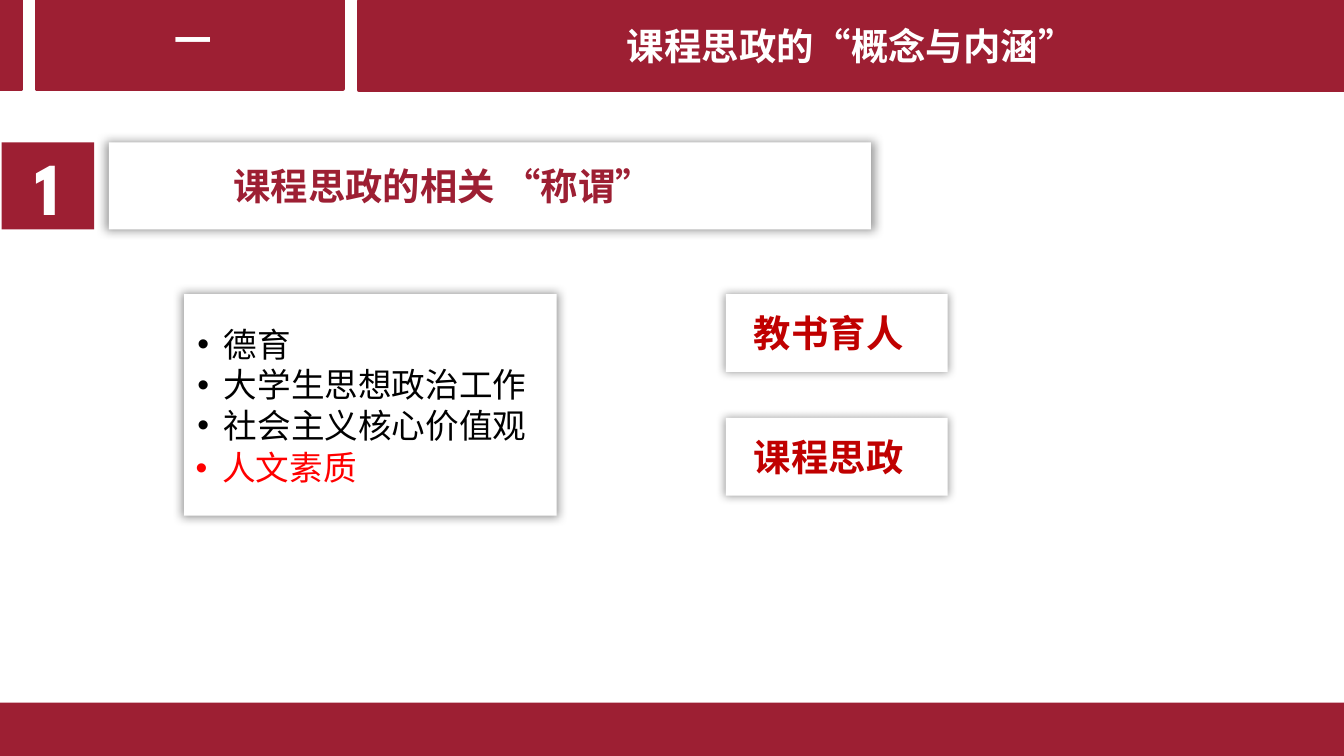
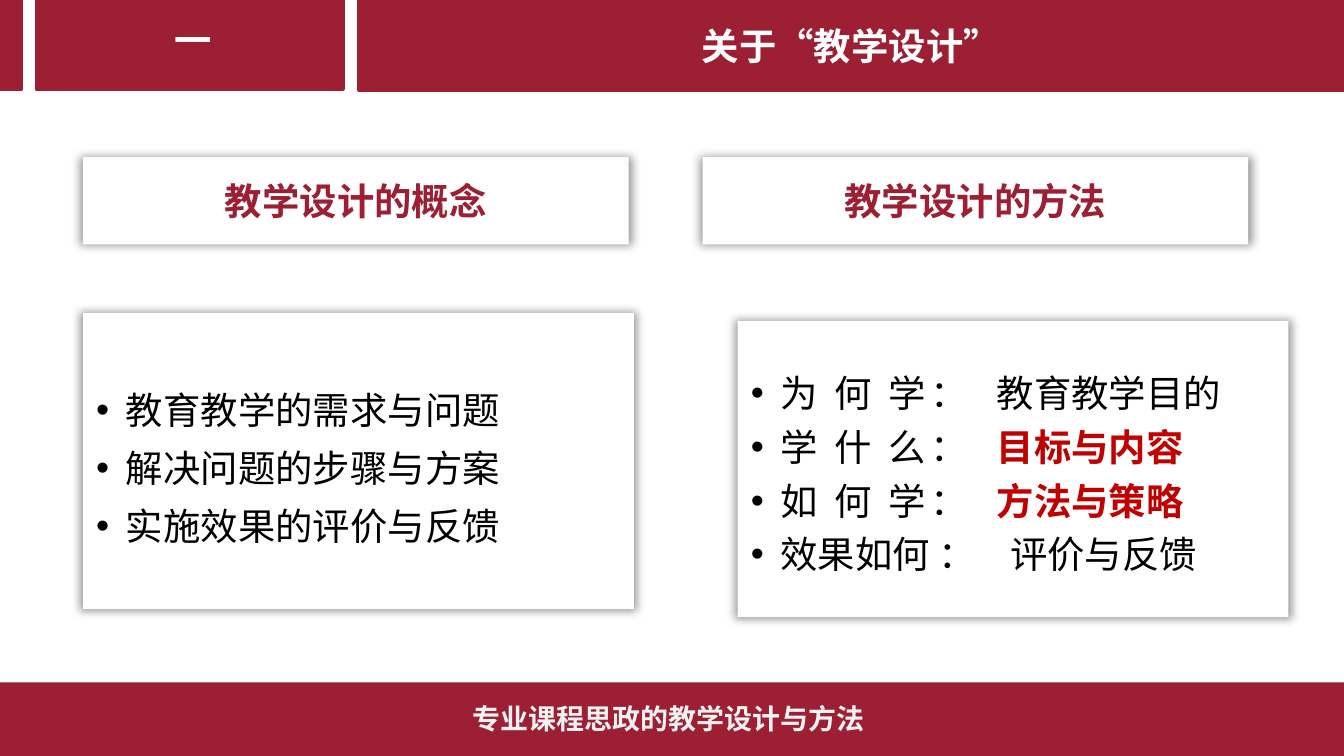
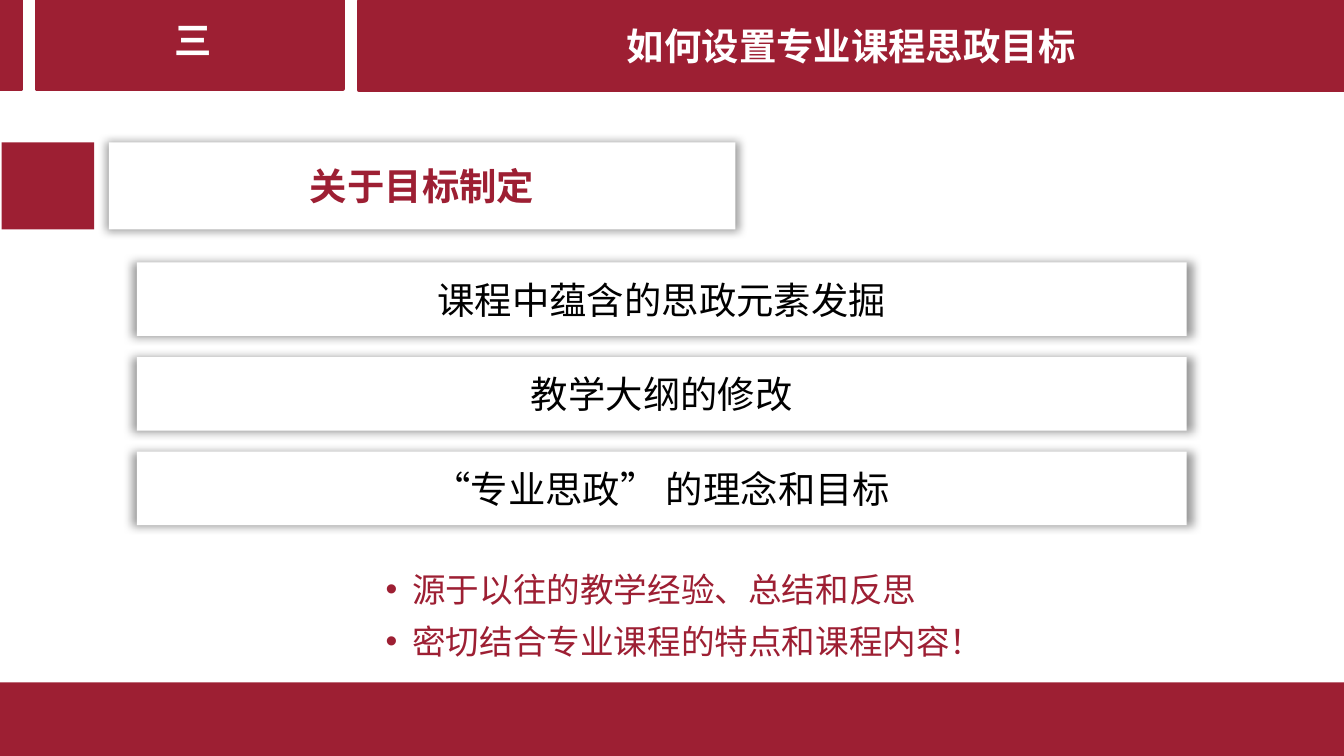
"""Build three slides on ideological education within courses and its teaching design."""
import pptx
import pptx.dml.color
import pptx.enum.shapes
import pptx.enum.text
import pptx.oxml.ns
import pptx.util
from lxml import etree

Cm = pptx.util.Cm
RGBColor = pptx.dml.color.RGBColor
Align = pptx.enum.text.PP_ALIGN
Anchor = pptx.enum.text.MSO_ANCHOR
qn = pptx.oxml.ns.qn

CRIMSON = RGBColor(0x9D, 0x1F, 0x33)
DEEP_RED = RGBColor(0xC0, 0x00, 0x00)
BRIGHT_RED = RGBColor(0xFF, 0x00, 0x00)
WHITE = RGBColor(0xFF, 0xFF, 0xFF)
PALE = RGBColor(0xF2, 0xF2, 0xF2)
BLACK = RGBColor(0x00, 0x00, 0x00)

BODY_FONT = "Noto Sans CJK SC"
NUMBER_FONT = "League Spartan"
SLIDE_WIDTH, SLIDE_HEIGHT = 25.4, 14.29
HEADING = {"size": 20, "color": CRIMSON, "bold": True}
TITLE = {"size": 20, "color": WHITE, "bold": True}
EMPHASIS = {"color": DEEP_RED, "bold": True}
NO_INSETS = dict.fromkeys(("margin_left", "margin_top", "margin_right", "margin_bottom"), 0)


def add_box(slide, place, fill=WHITE, outlined=False):
    """Add a rectangle; white ones cast a soft shadow."""
    shape = slide.shapes.add_shape(pptx.enum.shapes.MSO_SHAPE.RECTANGLE, *map(Cm, place))
    shape.shadow.inherit = False
    shape.fill.solid()
    shape.fill.fore_color.rgb = fill
    if outlined:
        shape.line.color.rgb = fill
        shape.line.width = pptx.util.Pt(2)
    else:
        shape.line.fill.background()
    if fill == WHITE:
        effects = shape._element.spPr.find(qn("a:effectLst"))
        shadow = etree.SubElement(effects, qn("a:outerShdw"), blurRad="63500", sx="101000",
                                  sy="101000", algn="ctr", rotWithShape="0")
        color = etree.SubElement(shadow, qn("a:prstClr"), val="black")
        etree.SubElement(color, qn("a:alpha"), val="40000")
    return shape


def write(shape, lines, size=20, color=BLACK, bold=False, name=BODY_FONT, align=Align.CENTER,
          bullet=False, spacing=1.0, indent=0, tabs=(), frame=None):
    """Fill a shape with lines, each a list of (text, format changes)."""
    text_frame = shape.text_frame
    settings = {"word_wrap": True, "vertical_anchor": Anchor.MIDDLE} | (frame or {})
    for attribute, value in settings.items():
        setattr(text_frame, attribute, value)
    for index, line in enumerate(lines):
        paragraph = text_frame.add_paragraph() if index else text_frame.paragraphs[0]
        paragraph.alignment = align
        paragraph.line_spacing = spacing
        properties = paragraph._p.get_or_add_pPr()
        if bullet:
            hanging = Cm(0.028 * size)
            properties.set("marL", str(hanging))
            properties.set("indent", str(-hanging))
            etree.SubElement(properties, qn("a:buFont"), typeface="Arial")
            etree.SubElement(properties, qn("a:buChar"), char="•")
        elif indent:
            properties.set("marL", str(Cm(indent)))
        if tabs:
            stops = etree.SubElement(properties, qn("a:tabLst"))
            etree.SubElement(stops, qn("a:tab"), pos=str(Cm(tabs[index])), algn="l")
        for text, changes in line:
            run = paragraph.add_run()
            run.text = text
            values = {"size": size, "color": color, "bold": bold, "name": name} | changes
            run.font.color.rgb = values.pop("color")
            values["size"] = pptx.util.Pt(values["size"])
            tracking = values.pop("tracking", None)
            for attribute, value in values.items():
                setattr(run.font, attribute, value)
            run_properties = run._r.get_or_add_rPr()
            run_properties.set("lang", "zh-CN")
            if tracking:
                run_properties.set("spc", str(tracking))
            etree.SubElement(run_properties, qn("a:ea"), typeface=values["name"])


presentation = pptx.Presentation()
presentation.slide_width = Cm(SLIDE_WIDTH)
presentation.slide_height = Cm(SLIDE_HEIGHT)

slides = []
for numeral, title, footer_top in (
    ("一", "课程思政的“概念与内涵”", 13.28),
    ("一", "关于“教学设计”", 12.9),
    ("三", "如何设置专业课程思政目标", 12.9),
):
    slide = presentation.slides.add_slide(presentation.slide_layouts[6])
    add_box(slide, (0, footer_top, SLIDE_WIDTH, SLIDE_HEIGHT - footer_top), CRIMSON)
    for left, width in ((0, 0.41), (0.69, 5.79)):
        add_box(slide, (left, 0, width, 1.68), CRIMSON, outlined=True)
    title_band = add_box(slide, (6.78, 0.02, 18.62, 1.68), CRIMSON, outlined=True)
    write(title_band, [[(title, {})]], **TITLE)
    numeral_box = slide.shapes.add_textbox(Cm(3.05), Cm(0.2), Cm(1.22), Cm(1.12))
    write(numeral_box, [[(numeral, {})]], align=Align.JUSTIFY,
          frame={"word_wrap": False, "vertical_anchor": Anchor.TOP}, **TITLE)
    slides.append(slide)
terms_slide, design_slide, goals_slide = slides

number_box = add_box(terms_slide, (0.03, 2.69, 1.75, 1.65), CRIMSON)
write(number_box, [[("1", {})]], size=40, color=WHITE, bold=True, name=NUMBER_FONT)
terms_heading = add_box(terms_slide, (2.06, 2.69, 14.4, 1.65))
write(terms_heading, [[("课程思政的相关 “称谓”", {})]], align=Align.LEFT, indent=2.1, **HEADING)
terms_box = add_box(terms_slide, (3.48, 5.56, 7.04, 4.19))
terms = ("德育", "大学生思想政治工作", "社会主义核心价值观")
write(terms_box, [[(term, {})] for term in terms], size=18, align=Align.LEFT, bullet=True,
      frame={"margin_bottom": Cm(0.9)})
humanities_box = terms_slide.shapes.add_textbox(Cm(3.45), Cm(8.33), Cm(3.68), Cm(1.02))
write(humanities_box, [[("人文素质", {})]], size=18, color=BRIGHT_RED, align=Align.LEFT,
      bullet=True, frame={"word_wrap": False, "vertical_anchor": Anchor.TOP})
for row, term in enumerate(("教书育人", "课程思政")):
    term_box = add_box(terms_slide, (13.72, 5.56 + 2.34 * row, 4.19, 1.47))
    write(term_box, [[(term, EMPHASIS)]], align=Align.LEFT, indent=0.28)

for left, heading in ((1.57, "教学设计的概念"), (13.28, "教学设计的方法")):
    write(add_box(design_slide, (left, 2.97, 10.31, 1.65)), [[(heading, {})]], **HEADING)
concepts = ("教育教学的需求与问题", "解决问题的步骤与方案", "实施效果的评价与反馈")
write(add_box(design_slide, (1.57, 5.92, 10.41, 5.59)), [[(concept, {})] for concept in concepts],
      align=Align.LEFT, bullet=True, spacing=1.3)
SPREAD = {"tracking": 225}
methods = [
    [("为 何 学", SPREAD), ("：\t教育教学目的", {})],
    [("学 什 么", SPREAD), ("：\t", {}), ("目标与内容", EMPHASIS)],
    [("如 何 学", SPREAD), ("：\t", {}), ("方法与策略", EMPHASIS)],
    [("效果如何 ：\t评价与反馈", {})],
]
write(add_box(design_slide, (13.94, 6.07, 10.41, 5.59)), methods, align=Align.LEFT, bullet=True,
      spacing=1.2, tabs=(4.65, 4.65, 4.65, 4.9))
footer_box = design_slide.shapes.add_textbox(Cm(8.94), Cm(13.26), Cm(9.53), Cm(0.64))
write(footer_box, [[("专业课程思政的教学设计与方法", {})]], size=15, color=PALE, bold=True,
      align=Align.LEFT, frame=NO_INSETS)

add_box(goals_slide, (0.03, 2.69, 1.75, 1.65), CRIMSON)
write(add_box(goals_slide, (2.06, 2.69, 11.84, 1.65)), [[("关于目标制定", {})]], **HEADING)
for row, goal in enumerate(("课程中蕴含的思政元素发掘", "教学大纲的修改", "“专业思政” 的理念和目标")):
    write(add_box(goals_slide, (2.59, 4.96 + 1.79 * row, 19.84, 1.39)), [[(goal, {})]])
remarks = ("源于以往的教学经验、总结和反思", "密切结合专业课程的特点和课程内容！")
remarks_box = goals_slide.shapes.add_textbox(Cm(7.29), Cm(10.52), Cm(11.81), Cm(1.85))
write(remarks_box, [[(remark, {})] for remark in remarks], size=18, color=CRIMSON,
      align=Align.LEFT, bullet=True, spacing=1.3, frame=NO_INSETS | {"vertical_anchor": Anchor.TOP})

presentation.save("out.pptx")
